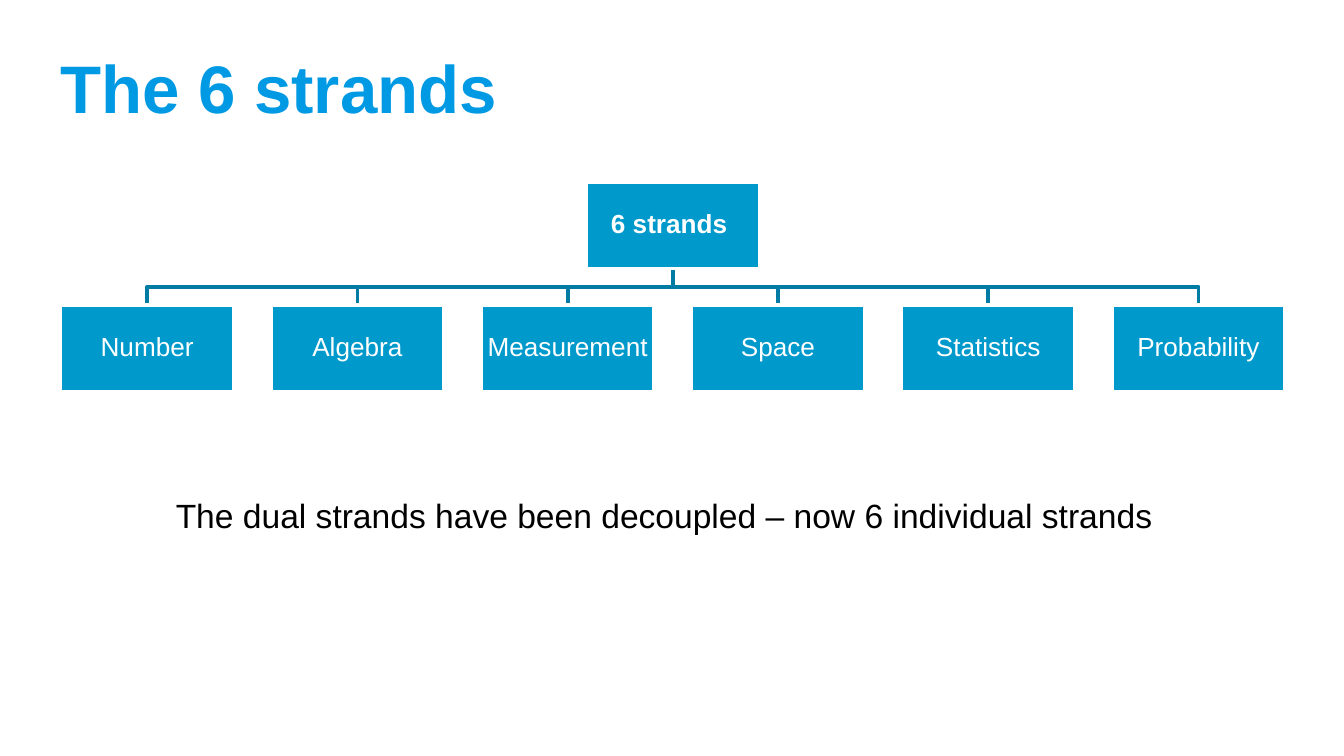
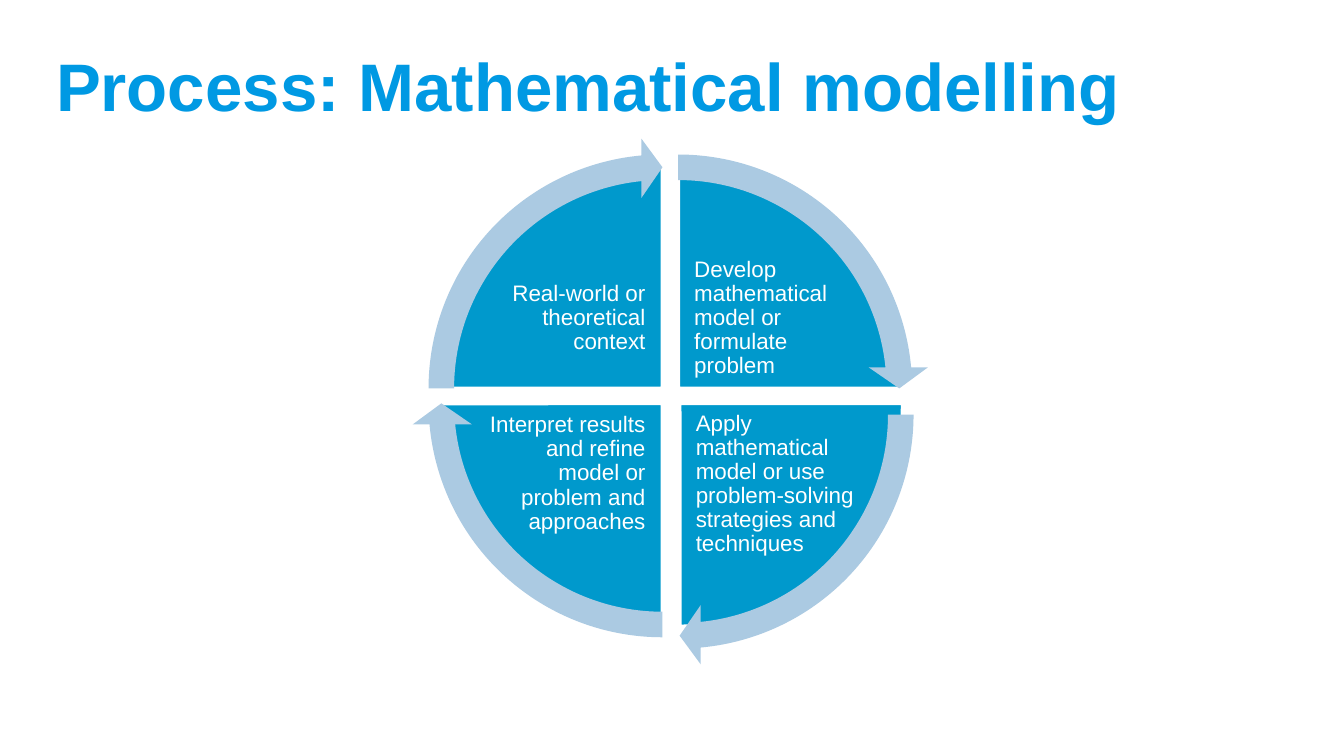
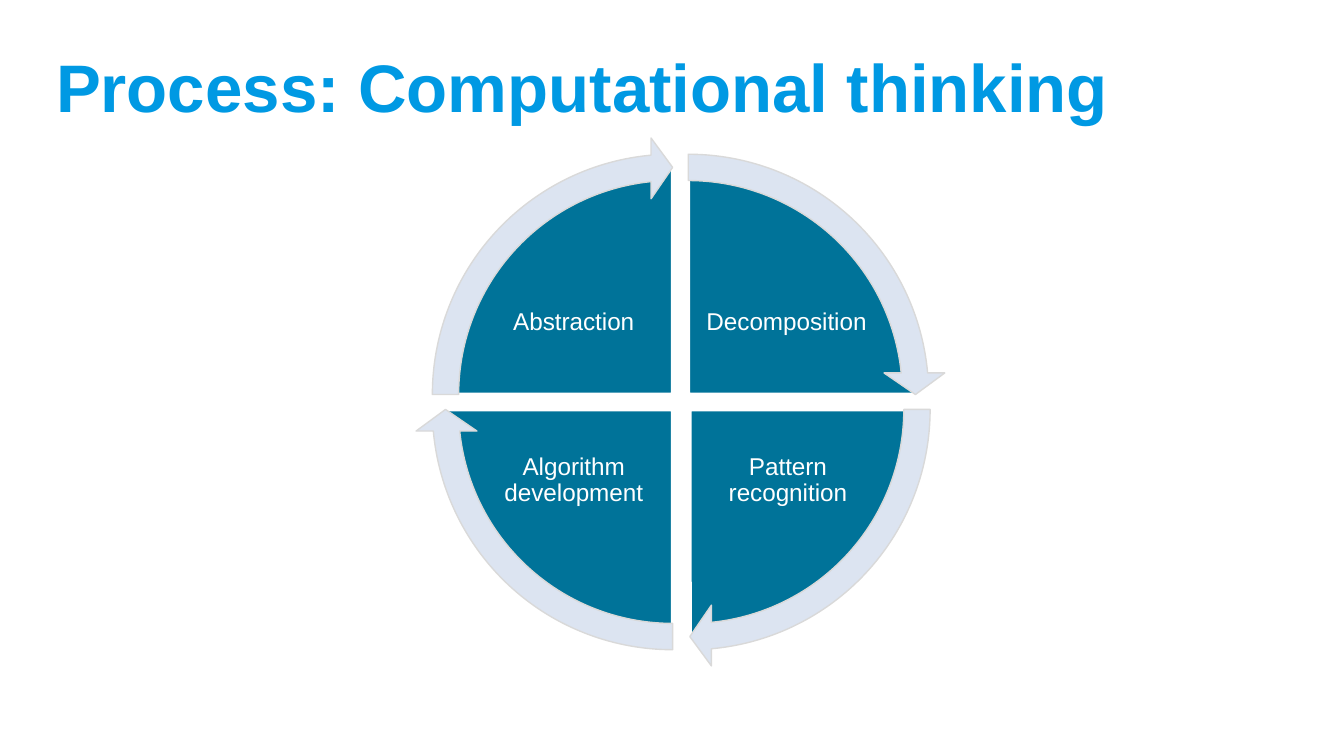
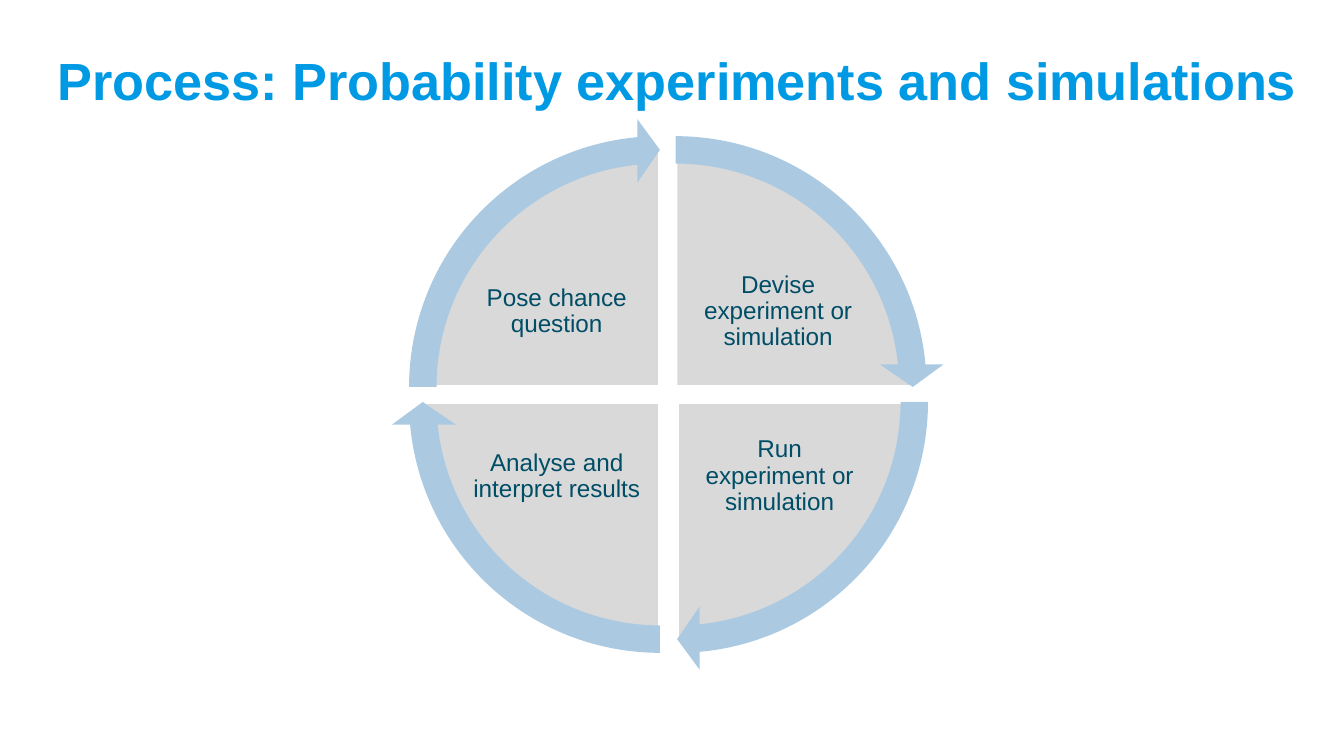
from pptx import Presentation
from pptx.dml.color import RGBColor
from pptx.enum.shapes import MSO_SHAPE
from pptx.enum.text import MSO_ANCHOR, PP_ALIGN
from pptx.util import Pt

COLOURS = {
    "title": "0099E3",
    "body": "000000",
    "white": "FFFFFF",
    "box": "0099CC",
    "branch": "007BA3",
    "teal": "007399",
    "grey": "D9D9D9",
    "ink": "004D66",
    "sky": "ABCAE2",
    "mist": "DCE4F1",
}
FONT = "Arial"
STRANDS = ["Number", "Algebra", "Measurement", "Space", "Statistics", "Probability"]

BOX_WIDTH, BOX_HEIGHT, BOX_PITCH = 92.9, 46.45, 112.64
ROW_LEFT, ROOT_TOP, ROW_TOP = 32.4, 97.4, 163.4

# Quadrants run clockwise from the top right: start angle, column, row, shift x, shift y
QUADRANTS = [
    (270, 1, 0, 8.4, 0),
    (0, 1, 1, 9.2, 8),
    (90, 0, 1, 0, 8),
    (180, 0, 0, 0, 0),
]
ADJUST_PER_DEGREE = 0.6
ARROW_SCALE = 1.124
ARROW_SWEEP, HEAD_SWEEP = 84.54, 5.46
ARROW_THICKNESS, HEAD_THICKNESS = 5.1 / 100, 5.9 / 100
LABEL_X, LABEL_Y = (0.1, 0.53), (0.206, 0.519)
LABEL_WIDTH, LABEL_HEIGHT = 0.368, 0.273


def rgb(name):
    return RGBColor.from_string(COLOURS[name])


def set_all(target, values):
    for name, value in values.items():
        setattr(target, name, value)


def style_shape(shape, fill=None, line=None, width=2):
    shape.shadow.inherit = False
    for part, colour in ((shape.fill, fill), (shape.line.fill, line)):
        if colour:
            part.solid()
            part.fore_color.rgb = rgb(colour)
        else:
            part.background()
    if line:
        shape.line.width = Pt(width)


def write(shape, text, size, colour, bold=False, align=PP_ALIGN.LEFT,
          anchor=MSO_ANCHOR.MIDDLE, spacing=1.0, insets=(7.2, 3.6, 7.2, 3.6)):
    """Fill a shape with one paragraph; insets are left, top, right, bottom."""
    frame = shape.text_frame
    sides = ("margin_left", "margin_top", "margin_right", "margin_bottom")
    set_all(frame, {"word_wrap": True, "vertical_anchor": anchor})
    set_all(frame, {side: Pt(inset) for side, inset in zip(sides, insets)})
    para = frame.paragraphs[0]
    set_all(para, {"alignment": align, "line_spacing": spacing})
    span = para.add_run()
    span.text = text
    set_all(span.font, {"name": FONT, "size": Pt(size), "bold": bold})
    span.font.color.rgb = rgb(colour)


def add_text(page, area, text, size, colour, **options):
    box = page.shapes.add_textbox(*map(Pt, area))
    write(box, text, size, colour, **options)


def add_page(deck, title, area, size=36):
    page = deck.slides.add_slide(deck.slide_layouts[6])
    add_text(page, area, title, size, "title", bold=True)
    return page


def add_branch(page, start, end):
    """Draw a bent line that turns halfway down between two points."""
    (x1, y1), (x2, y2) = start, end
    middle = (y1 + y2) / 2
    builder = page.shapes.build_freeform(Pt(x1), Pt(y1))
    corners = [(x1, middle), (x2, middle), (x2, y2)]
    builder.add_line_segments([(Pt(x), Pt(y)) for x, y in corners], close=False)
    style_shape(builder.convert_to_shape(), line="branch")


def add_strand_box(page, centre, top, text, bold=False):
    box = page.shapes.add_shape(
        MSO_SHAPE.RECTANGLE, Pt(centre - BOX_WIDTH / 2), Pt(top),
        Pt(BOX_WIDTH), Pt(BOX_HEIGHT))
    style_shape(box, "box", "white")
    write(box, text, 14, "white", bold=bold, align=PP_ALIGN.CENTER,
          spacing=0.9, insets=(0.7,) * 4)


def add_strand_tree(page, root, strands):
    centres = [ROW_LEFT + BOX_WIDTH / 2 + i * BOX_PITCH for i in range(len(strands))]
    root_centre = (centres[0] + centres[-1]) / 2
    for centre in centres:
        add_branch(page, (root_centre, ROOT_TOP + BOX_HEIGHT), (centre, ROW_TOP))
    add_strand_box(page, root_centre, ROOT_TOP, root, bold=True)
    for centre, strand in zip(centres, strands):
        add_strand_box(page, centre, ROW_TOP, strand)


def add_round(page, preset, left, top, size, adjustments, **style):
    shape = page.shapes.add_shape(preset, Pt(left), Pt(top), Pt(size), Pt(size))
    for index, value in enumerate(adjustments):
        shape.adjustments[index] = value
    style_shape(shape, **style)


def add_cycle(page, left, top, size, labels, fill, arrow_fill, text_size=13,
              text_colour="white", arrow_line=None, aligns=(PP_ALIGN.CENTER,) * 4,
              top_insets=(1.44,) * 4, arrow_drops=(0,) * 4):
    """Draw four quarter pies with labels, ringed by four curved arrows."""
    for quadrant, label, align, inset in zip(QUADRANTS, labels, aligns, top_insets):
        start, column, row, shift_x, shift_y = quadrant
        x, y = left + shift_x, top + shift_y
        angles = [angle % 360 * ADJUST_PER_DEGREE for angle in (start, start + 90)]
        add_round(page, MSO_SHAPE.PIE, x, y, size, angles, fill=fill, line="white")
        area = (x + LABEL_X[column] * size, y + LABEL_Y[row] * size,
                LABEL_WIDTH * size, LABEL_HEIGHT * size)
        add_text(page, area, label, text_size, text_colour, align=align,
                 spacing=0.9, insets=(1.44, inset, 1.44, 1.44))

    ring = size * ARROW_SCALE
    overhang = (ring - size) / 2
    for (start, _, _, shift_x, shift_y), drop in zip(QUADRANTS, arrow_drops):
        adjustments = [
            ARROW_THICKNESS,
            HEAD_SWEEP * ADJUST_PER_DEGREE,
            (start + ARROW_SWEEP) * ADJUST_PER_DEGREE,
            start * ADJUST_PER_DEGREE,
            HEAD_THICKNESS,
        ]
        add_round(page, MSO_SHAPE.CIRCULAR_ARROW, left + shift_x - overhang,
                  top + shift_y - overhang + drop, ring, adjustments,
                  fill=arrow_fill, line=arrow_line, width=0.75)


def main():
    deck = Presentation()
    set_all(deck, {"slide_width": Pt(720), "slide_height": Pt(405)})

    page = add_page(deck, "The 6 strands", (25.2, 20.2, 674.6, 52.6))
    add_text(page, (87.1, 261.4, 545, 54),
             "The dual strands have been decoupled – now 6 individual strands",
             18, "body", anchor=MSO_ANCHOR.TOP)
    add_strand_tree(page, "6 strands ", STRANDS)

    page = add_page(deck, "Process: Mathematical modelling", (23, 33.1, 669.6, 24.5))
    add_cycle(
        page, 235.4, 88.6, 239,
        ["Develop mathematical model or formulate problem",
         "Apply mathematical model or use problem-solving strategies and techniques",
         "Interpret results and refine model or problem and approaches",
         "Real-world or theoretical context"],
        "box", "sky", text_size=12,
        aligns=(PP_ALIGN.LEFT, PP_ALIGN.LEFT, PP_ALIGN.RIGHT, PP_ALIGN.RIGHT),
        top_insets=(1.44, 13.8, 2.5, 1.44), arrow_drops=(0, 6, 0, 0))

    page = add_page(deck, "Process: Computational thinking", (23, 24.5, 686.2, 42.5))
    add_cycle(
        page, 237.6, 88.6, 245.5,
        ["Decomposition", "Pattern recognition", "Algorithm development", "Abstraction"],
        "teal", "mist", arrow_line="grey")

    page = add_page(deck, "Process: Probability experiments and simulations",
                    (23.8, 21.6, 686.2, 42.5), size=28)
    add_cycle(
        page, 225.4, 79.2, 256.3,
        ["Devise experiment or simulation", "Run experiment or simulation",
         "Analyse and interpret results", "Pose chance question"],
        "grey", "sky", text_colour="ink")

    deck.save("out.pptx")


if __name__ == "__main__":
    main()
